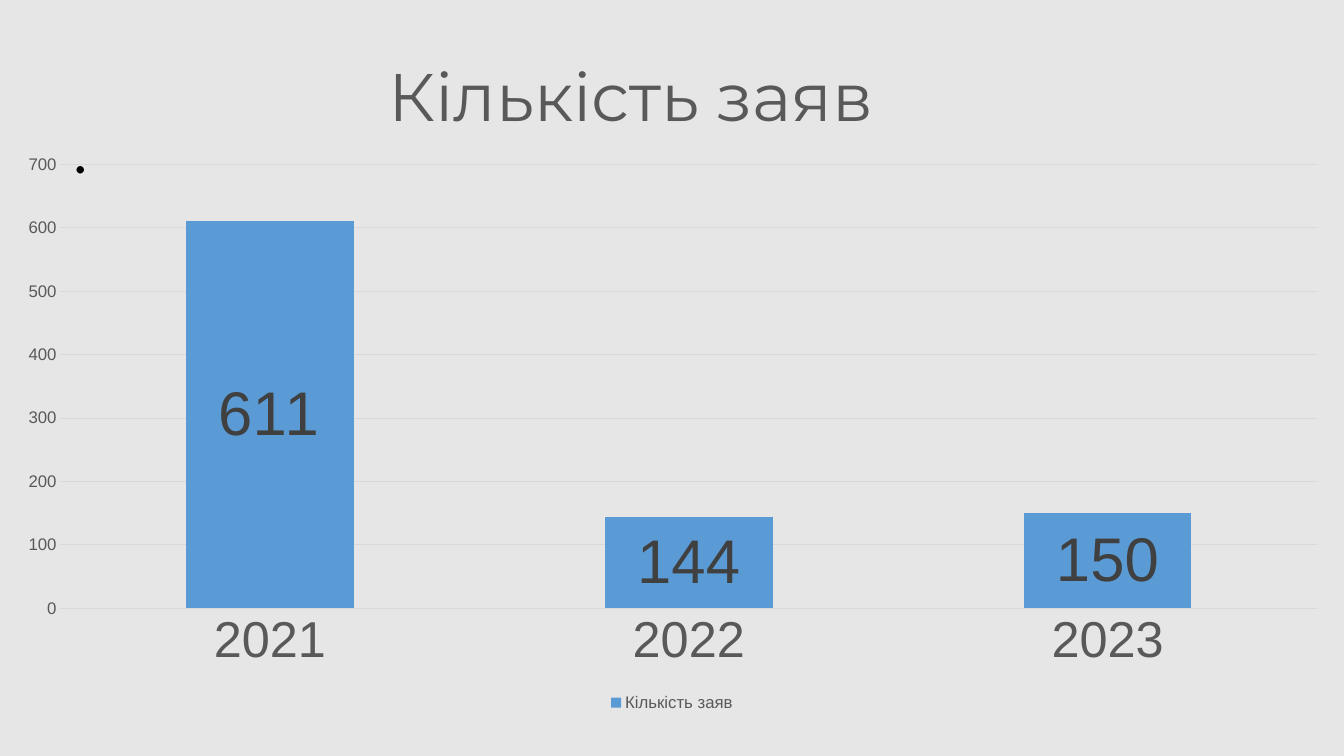
from dataclasses import dataclass

from lxml import etree
from pptx import Presentation
from pptx.chart import data as cd
from pptx.dml.color import RGBColor
from pptx.enum import chart as ce, text as te
from pptx.oxml import ns
from pptx.util import Inches, Pt

BACKGROUND = RGBColor(0xE7, 0xE6, 0xE6)
BLACK = RGBColor(0, 0, 0)
GRAY = RGBColor(0x59, 0x59, 0x59)
DARK_GRAY = RGBColor(0x40, 0x40, 0x40)
GRID_GRAY = RGBColor(0xD9, 0xD9, 0xD9)
BAR_BLUE = RGBColor(0x5B, 0x9B, 0xD5)
SERIES_NAME = "Кількість заяв"


@dataclass
class YearCount:
    year: str
    count: int


COUNTS = [YearCount("2021", 611), YearCount("2022", 144), YearCount("2023", 150)]


def style_font(font, size: float, color: RGBColor, name: str = "Arial") -> None:
    font.size = Pt(size)
    font.color.rgb = color
    font.name = name
    font.bold = False


def set_layout(parent, after: str, **values) -> None:
    """Place a chart part by fractions of the chart's size."""
    for old in parent.findall(ns.qn("c:layout")):
        parent.remove(old)
    layout = etree.Element(ns.qn("c:layout"))
    manual = etree.SubElement(layout, ns.qn("c:manualLayout"))
    for tag, value in values.items():
        etree.SubElement(manual, ns.qn(f"c:{tag}")).set("val", str(value))
    previous = parent.find(ns.qn(after)) if after else None
    parent.insert(0 if previous is None else parent.index(previous) + 1, layout)


def add_title(s) -> None:
    sp = s.shapes.title
    sp.left, sp.top, sp.width, sp.height = (Inches(v) for v in (0.62, 1.06, 1.41, 0.93))
    tf = sp.text_frame
    tf.text = "."
    tf.vertical_anchor = te.MSO_ANCHOR.MIDDLE
    p = tf.paragraphs[0]
    p.alignment = te.PP_ALIGN.LEFT
    p.line_spacing = 0.9
    style_font(p.font, 44, BLACK, "Calibri")


def add_counts_chart(s) -> None:
    data = cd.CategoryChartData()
    data.categories = [c.year for c in COUNTS]
    data.add_series(SERIES_NAME, [c.count for c in COUNTS])
    chart = s.shapes.add_chart(
        ce.XL_CHART_TYPE.COLUMN_STACKED, 0, 0, Inches(13.33), Inches(7.1), data
    ).chart
    style_font(chart.font, 10, BLACK)

    # Chart title
    chart.has_title = True
    title = chart.chart_title
    title.text_frame.text = SERIES_NAME
    style_font(title.text_frame.paragraphs[0].font, 48, GRAY, "Montserrat")
    title.include_in_layout = False
    set_layout(title._element, "c:tx", xMode="edge", yMode="edge", x=0.28, y=0.05)

    # Bars and their labels
    plot = chart.plots[0]
    plot.gap_width, plot.overlap = 150, 100
    plot.vary_by_categories = False
    series = plot.series[0]
    series.format.fill.solid()
    series.format.fill.fore_color.rgb = BAR_BLUE
    labels = series.data_labels
    labels.show_value = True
    labels.position = ce.XL_LABEL_POSITION.CENTER
    style_font(labels.font, 44, DARK_GRAY)

    # Axes
    for axis, size in ((chart.category_axis, 36), (chart.value_axis, 12)):
        axis.major_tick_mark = axis.minor_tick_mark = ce.XL_TICK_MARK.NONE
        axis.format.line.fill.background()
        style_font(axis.tick_labels.font, size, GRAY)
    values = chart.value_axis
    values.minimum_scale, values.maximum_scale, values.major_unit = 0, 700, 100
    values.has_major_gridlines = True
    grid = values.major_gridlines.format.line
    grid.color.rgb, grid.width = GRID_GRAY, Pt(0.75)
    set_layout(
        chart._chartSpace.chart.plotArea, "", layoutTarget="inner",
        xMode="edge", yMode="edge", x=0.045, y=0.23, w=0.935, h=0.62,
    )

    # Legend
    chart.has_legend = True
    chart.legend.position = ce.XL_LEGEND_POSITION.BOTTOM
    chart.legend.include_in_layout = False
    style_font(chart.legend.font, 12, GRAY)


def main() -> None:
    prs = Presentation()
    prs.slide_width, prs.slide_height = Inches(13.33), Inches(7.5)
    s = prs.slides.add_slide(prs.slide_layouts[5])
    s.background.fill.solid()
    s.background.fill.fore_color.rgb = BACKGROUND
    add_title(s)
    add_counts_chart(s)
    prs.save("out.pptx")


if __name__ == "__main__":
    main()
